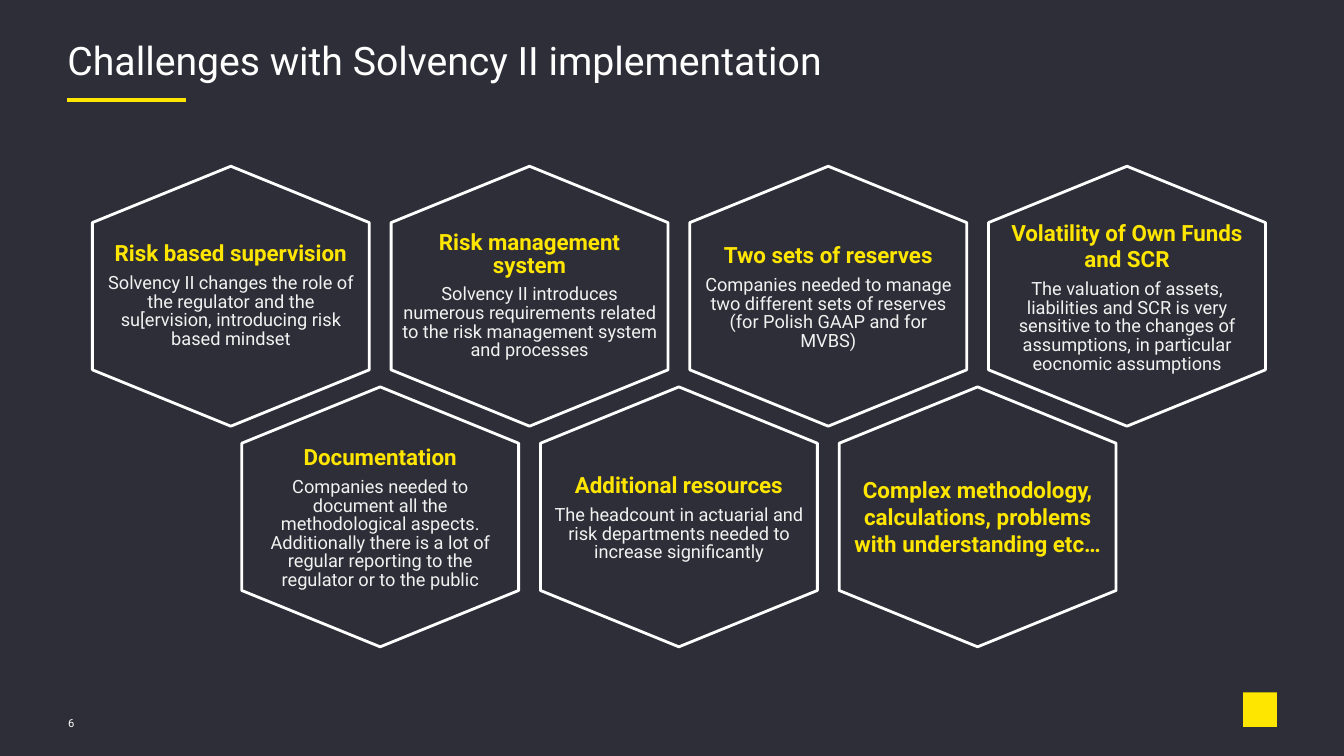
from dataclasses import dataclass

from pptx import Presentation
from pptx.dml.color import RGBColor
from pptx.enum.shapes import MSO_CONNECTOR, MSO_SHAPE
from pptx.enum.text import MSO_ANCHOR, MSO_AUTO_SIZE, PP_ALIGN
from pptx.oxml.ns import qn
from pptx.util import Cm, Pt
from lxml.etree import SubElement


@dataclass(frozen=True)
class Theme:
    font: str = "Roboto"
    background: RGBColor = RGBColor(0x2E, 0x2E, 0x38)
    accent: RGBColor = RGBColor(0xFF, 0xE6, 0x00)
    white: RGBColor = RGBColor(0xFF, 0xFF, 0xFF)
    body: RGBColor = RGBColor(0xF2, 0xF2, 0xF2)
    title_size: int = 28
    heading_size: int = 16
    body_size: int = 13
    number_size: int = 8


theme = Theme()


def add_span(para, text, size, color, bold=False):
    span = para.add_run()
    span.text = text
    span.font.name = theme.font
    span.font.size = Pt(size)
    span.font.color.rgb = color
    span.font.bold = bold


def set_frame(frame, anchor, side=0):
    frame.word_wrap = True
    frame.auto_size = MSO_AUTO_SIZE.NONE
    frame.vertical_anchor = anchor
    frame.margin_left = frame.margin_right = Cm(side)
    frame.margin_top = frame.margin_bottom = 0


deck = Presentation()
deck.slide_width, deck.slide_height = Cm(33.88), Cm(19.05)
page = deck.slides.add_slide(deck.slide_layouts[5])
page.background.fill.solid()
page.background.fill.fore_color.rgb = theme.background

title = page.shapes.title
title.left, title.top, title.width, title.height = Cm(1.7), Cm(1.09), Cm(30.48), Cm(1.65)
set_frame(title.text_frame, MSO_ANCHOR.TOP)
para = title.text_frame.paragraphs[0]
para.alignment = PP_ALIGN.LEFT
para.line_spacing = 0.85
add_span(para, "Challenges with Solvency II implementation", theme.title_size, theme.white)

underline = page.shapes.add_connector(MSO_CONNECTOR.STRAIGHT, Cm(1.7), Cm(2.52), Cm(4.7), Cm(2.52))
underline.line.color.rgb = theme.accent
underline.line.width = Pt(3)
SubElement(underline.element.spPr, qn("a:effectLst"))

number_box = page.shapes.add_textbox(Cm(1.72), Cm(17.98), Cm(1.85), Cm(0.5))
set_frame(number_box.text_frame, MSO_ANCHOR.MIDDLE)
add_span(number_box.text_frame.paragraphs[0], "6", theme.number_size, theme.white)

emblem = page.shapes.add_shape(MSO_SHAPE.RECTANGLE, Cm(31.34), Cm(17.45), Cm(0.85), Cm(0.87))
emblem.shadow.inherit = False
emblem.fill.solid()
emblem.fill.fore_color.rgb = theme.accent
emblem.line.fill.background()

hexagon_width, hexagon_height, shoulder = 6.98, 6.55, 1.42
first_left, first_top = 2.33, 4.19
column_step, row_step = 7.53, 5.56

challenge_rows = [
    [
        ("Risk based supervision", 0.85,
         "Solvency II changes the role of the regulator and the su[ervision, "
         "introducing risk based mindset"),
        ("Risk management system", 0.85,
         "Solvency II introduces numerous requirements related to the risk "
         "management system and processes"),
        ("Two sets of reserves", 1.0,
         "Companies needed to manage two different sets of reserves "
         "(for Polish GAAP and for MVBS)"),
        ("Volatility of Own Funds and SCR", 1.0,
         "The valuation of assets, liabilities and SCR is very sensitive to the "
         "changes of assumptions, in particular eocnomic assumptions"),
    ],
    [
        ("Documentation", 1.0,
         "Companies needed to document all the methodological aspects. "
         "Additionally there is a lot of regular reporting to the regulator "
         "or to the public"),
        ("Additional resources", 1.0,
         "The headcount in actuarial and risk departments needed to increase "
         "significantly"),
        ("Complex methodology, calculations, problems with understanding etc…", 1.0, ""),
    ],
]

for row, challenges in enumerate(challenge_rows):
    top = first_top + row * row_step
    bottom = top + hexagon_height
    for column, (heading, heading_spacing, detail) in enumerate(challenges):
        left = first_left + (column + row / 2) * column_step
        middle, right = left + hexagon_width / 2, left + hexagon_width
        corners = [
            (right, top + shoulder), (right, bottom - shoulder), (middle, bottom),
            (left, bottom - shoulder), (left, top + shoulder),
        ]
        builder = page.shapes.build_freeform(Cm(middle), Cm(top))
        builder.add_line_segments([(Cm(x), Cm(y)) for x, y in corners], close=True)
        hexagon = builder.convert_to_shape()
        hexagon.shadow.inherit = False
        hexagon.fill.background()
        hexagon.line.color.rgb = theme.white
        hexagon.line.width = Pt(2)

        frame = hexagon.text_frame
        set_frame(frame, MSO_ANCHOR.MIDDLE, 0.25)
        para = frame.paragraphs[0]
        para.line_spacing = heading_spacing
        add_span(para, heading, theme.heading_size, theme.accent, bold=True)
        if detail:
            para = frame.add_paragraph()
            para.line_spacing = 0.85
            add_span(para, detail, theme.body_size, theme.body)
        for para in frame.paragraphs:
            para.alignment = PP_ALIGN.CENTER
            para.space_after = Pt(6)

deck.save("out.pptx")
